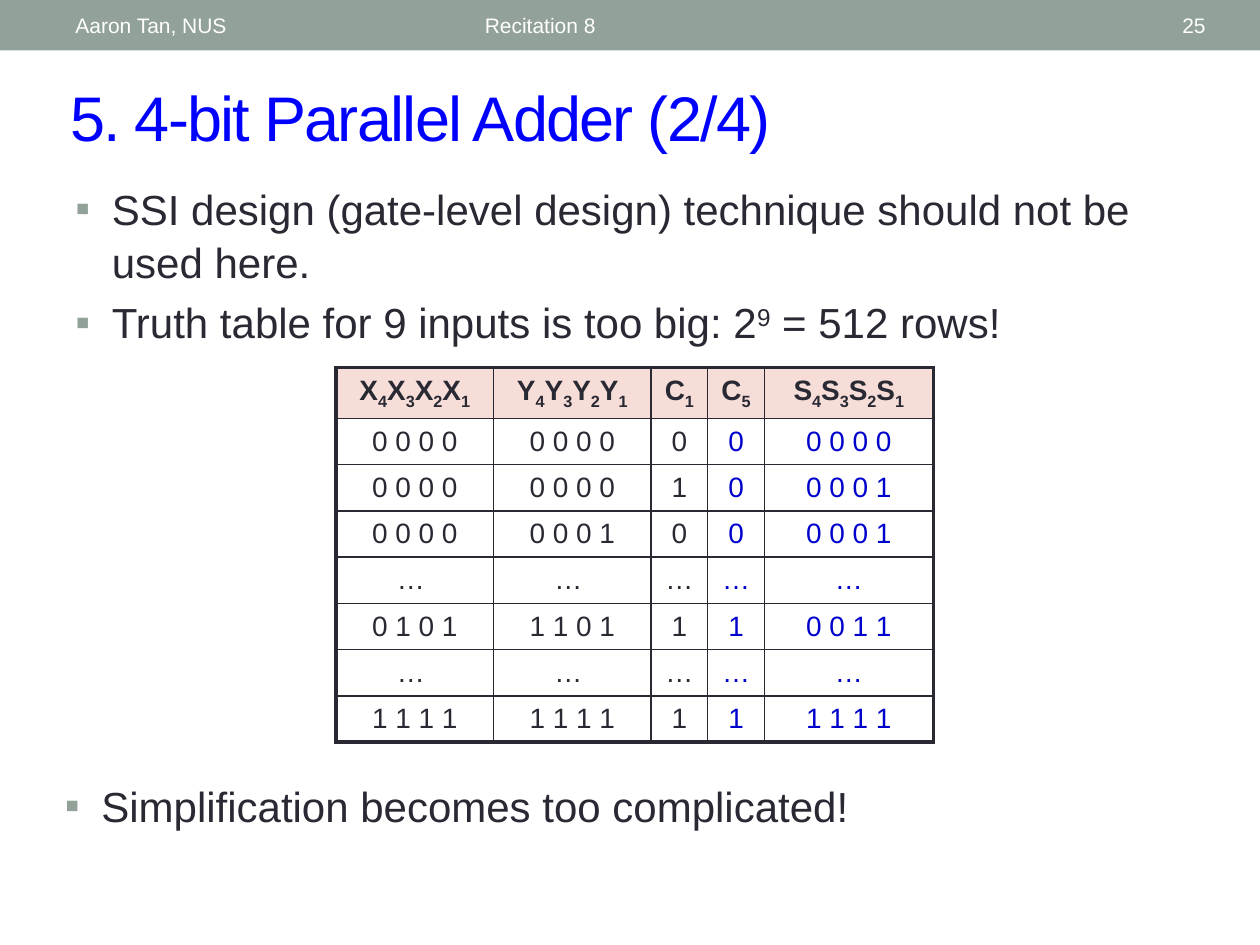
import dataclasses

import lxml.etree
import pptx
import pptx.dml.color
import pptx.enum.shapes
import pptx.enum.text
import pptx.oxml.ns
import pptx.util

Pt = pptx.util.Pt
Align = pptx.enum.text.PP_ALIGN
Anchor = pptx.enum.text.MSO_ANCHOR


@dataclasses.dataclass(frozen=True)
class Theme:
    font: str = "Arial"
    band: str = "93A299"
    band_text: str = "FFFFFF"
    title: str = "0000FF"
    body: str = "292934"
    output: str = "0000CC"
    heading_fill: str = "F6DDD8"
    band_size: float = 12
    title_size: float = 36
    body_size: float = 24
    table_size: float = 16
    thin: float = 1
    thick: float = 2.25


THEME = Theme()

HEADINGS = ["X4X3X2X1", "Y4Y3Y2Y1", "C1", "C5", "S4S3S2S1"]
TRUTH_ROWS = [
    ["0 0 0 0", "0 0 0 0", "0", "0", "0 0 0 0"],
    ["0 0 0 0", "0 0 0 0", "1", "0", "0 0 0 1"],
    ["0 0 0 0", "0 0 0 1", "0", "0", "0 0 0 1"],
    ["… ", "… ", "…", "…", "…"],
    ["0 1 0 1", "1 1 0 1", "1", "1", "0 0 1 1"],
    ["… ", "… ", "…", "…", "…"],
    ["1 1 1 1", "1 1 1 1", "1", "1", "1 1 1 1"],
]
COLUMN_WIDTHS = [90, 90, 32.4, 32.4, 96.5]
ROW_HEIGHTS = [28, 25, 25, 25, 25, 26.5, 25, 25]
FIRST_OUTPUT_COLUMN = 3


def rgb(value):
    return pptx.dml.color.RGBColor.from_string(value)


def add_xml(parent, tag, **attributes):
    return lxml.etree.SubElement(parent, pptx.oxml.ns.qn(tag), **attributes)


def add_run(paragraph, words, size, color, bold=False, baseline=0, spacing=0):
    run = paragraph.add_run()
    run.text = words
    run.font.name = THEME.font
    run.font.size = Pt(size)
    run.font.bold = bold
    run.font.color.rgb = rgb(color)
    properties = run.font._element
    if baseline:
        properties.set("baseline", str(baseline * 1000))
    if spacing:
        properties.set("spc", str(spacing * 100))


def add_frame(slide, left, top, width, height, anchor):
    frame = slide.shapes.add_textbox(Pt(left), Pt(top), Pt(width), Pt(height)).text_frame
    frame.word_wrap = True
    frame.vertical_anchor = anchor
    return frame


def add_line(slide, box, words, size, color, align=Align.LEFT, spacing=0):
    paragraph = add_frame(slide, *box, Anchor.MIDDLE).paragraphs[0]
    paragraph.alignment = align
    add_run(paragraph, words, size, color, spacing=spacing)


def add_band(slide, width):
    band = slide.shapes.add_shape(
        pptx.enum.shapes.MSO_SHAPE.RECTANGLE, 0, 0, Pt(width), Pt(28.8))
    band.shadow.inherit = False
    band.fill.solid()
    band.fill.fore_color.rgb = rgb(THEME.band)
    band.line.fill.background()


def add_bullets(slide, box, items):
    frame = add_frame(slide, *box, Anchor.TOP)
    for index, pieces in enumerate(items):
        paragraph = frame.paragraphs[0] if index == 0 else frame.add_paragraph()
        paragraph.space_before = Pt(4)
        paragraph.line_spacing = 1.06
        for words, baseline in pieces:
            add_run(paragraph, words, THEME.body_size, THEME.body, baseline=baseline)
        properties = paragraph._p.get_or_add_pPr()
        properties.set("marL", str(Pt(20.9)))
        properties.set("indent", str(-Pt(20.9)))
        bullet_color = add_xml(properties, "a:buClr")
        add_xml(bullet_color, "a:srgbClr", val=THEME.band)
        add_xml(properties, "a:buFont", typeface=THEME.font)
        add_xml(properties, "a:buChar", char="▪")


def set_borders(cell, outer_sides):
    properties = cell._tc.get_or_add_tcPr()
    for side in "LRTB":
        weight = THEME.thick if side in outer_sides else THEME.thin
        border = add_xml(properties, f"a:ln{side}", w=str(Pt(weight)))
        fill = add_xml(border, "a:solidFill")
        add_xml(fill, "a:srgbClr", val=THEME.body)


def fill_heading(cell, paragraph, label):
    cell.fill.solid()
    cell.fill.fore_color.rgb = rgb(THEME.heading_fill)
    for symbol in label:
        add_run(paragraph, symbol, THEME.table_size, THEME.body, bold=True,
                baseline=-25 if symbol.isdigit() else 0)


def add_truth_table(slide, left, top):
    rows = [HEADINGS] + TRUTH_ROWS
    last_row, last_column = len(rows) - 1, len(HEADINGS) - 1
    table = slide.shapes.add_table(
        len(rows), len(HEADINGS), Pt(left), Pt(top),
        Pt(sum(COLUMN_WIDTHS)), Pt(sum(ROW_HEIGHTS))).table
    table.first_row = False
    table.horz_banding = False
    for column, width in zip(table.columns, COLUMN_WIDTHS):
        column.width = Pt(width)
    for row, height in zip(table.rows, ROW_HEIGHTS):
        row.height = Pt(height)
    for r, values in enumerate(rows):
        for c, value in enumerate(values):
            cell = table.cell(r, c)
            edges = {"L": c == 0, "R": c == last_column, "T": r == 0, "B": r == last_row}
            set_borders(cell, [side for side, outer in edges.items() if outer])
            cell.vertical_anchor = Anchor.MIDDLE
            paragraph = cell.text_frame.paragraphs[0]
            paragraph.alignment = Align.CENTER
            if r == 0:
                fill_heading(cell, paragraph, value)
            else:
                cell.fill.background()
                color = THEME.output if c >= FIRST_OUTPUT_COLUMN else THEME.body
                add_run(paragraph, value, THEME.table_size, color)


def main():
    deck = pptx.Presentation()
    deck.slide_width, deck.slide_height = Pt(720), Pt(540)
    slide = deck.slides.add_slide(deck.slide_layouts[6])

    add_band(slide, 720)
    for left, width, words, align in [
        (36, 228, "Aaron Tan, NUS", Align.LEFT),
        (270, 324, "Recitation 8", Align.LEFT),
        (628, 68, "25", Align.RIGHT),
    ]:
        add_line(slide, (left, 1.5, width, 26), words,
                 THEME.band_size, THEME.band_text, align)

    add_line(slide, (33, 41, 663, 50.5), "5. 4-bit Parallel Adder (2/4)",
             THEME.title_size, THEME.title, spacing=-1)
    add_bullets(slide, (36, 99.4, 618, 103), [
        [("SSI design (gate-level design) technique should not be used here.", 0)],
        [("Truth table for 9 inputs is too big: 2", 0), ("9", 30), (" = 512 rows!", 0)],
    ])
    add_truth_table(slide, 192, 210)
    add_bullets(slide, (30, 440.6, 648, 42), [
        [("Simplification becomes too complicated!", 0)],
    ])
    deck.save("out.pptx")


if __name__ == "__main__":
    main()
